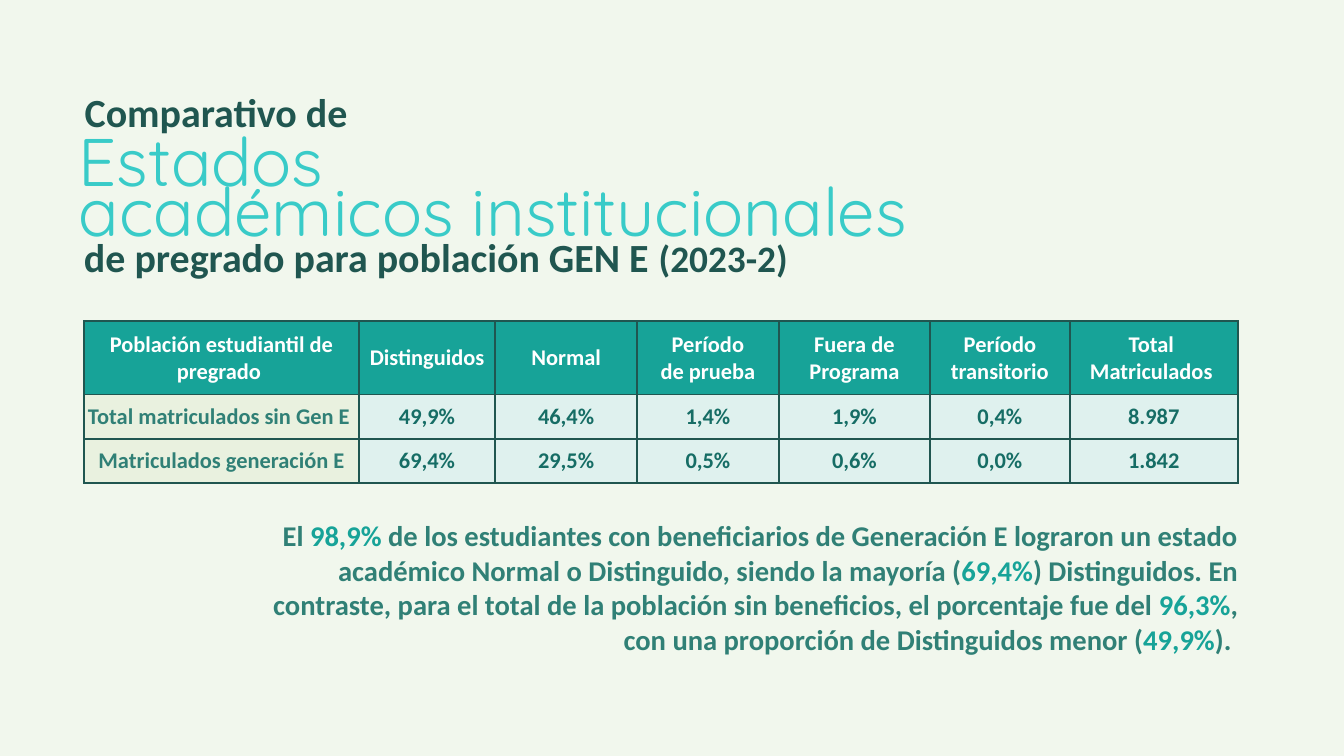
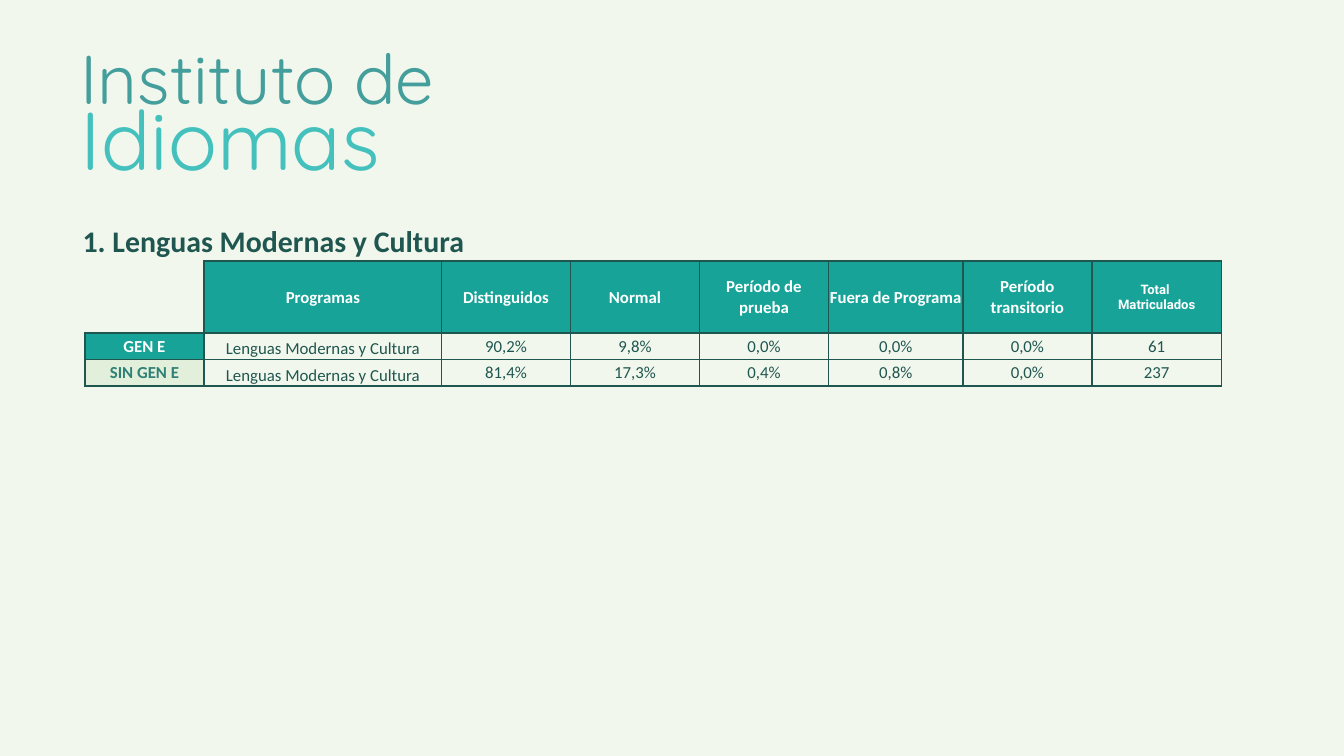
from lxml import etree
from pptx import Presentation
from pptx.dml.color import RGBColor
from pptx.enum import text
from pptx.oxml import ns
from pptx.util import Inches, Pt

COLORS = {
    "background": "F1F7ED",
    "ink": "205650",
    "teal": "17A398",
    "soft_teal": "308076",
    "figure": "166D65",
    "turquoise": "39CBC8",
    "institute": "449E9C",
    "languages": "44C0BD",
    "label": "E9F1DF",
    "label_green": "E2EFDA",
    "mint": "DFF1EE",
    "white": "FFFFFF",
}
BODY_FONT = "Calibri"
TITLE_FONT = "Quicksand"
CENTER = text.PP_ALIGN.CENTER
MIDDLE = text.MSO_ANCHOR.MIDDLE
BOTTOM = text.MSO_ANCHOR.BOTTOM
BORDER_WIDTH = Pt(2.25)


def rgb(name):
    return RGBColor.from_string(COLORS[name])


def style_run(run, size, color, bold=False, font=BODY_FONT):
    run.font.size = Pt(size)
    run.font.name = font
    run.font.bold = bold
    run.font.color.rgb = rgb(color)


def add_slide(prs):
    slide = prs.slides.add_slide(prs.slide_layouts[6])
    slide.background.fill.solid()
    slide.background.fill.fore_color.rgb = rgb("background")
    return slide


def add_frame(slide, left, top, width, height):
    frame = slide.shapes.add_textbox(
        Inches(left), Inches(top), Inches(width), Inches(height)).text_frame
    frame.word_wrap = True
    frame.auto_size = text.MSO_AUTO_SIZE.SHAPE_TO_FIT_TEXT
    frame.margin_left = frame.margin_right = 0
    frame.margin_top = frame.margin_bottom = 0
    return frame


def add_heading(slide, area, wording, size, color, bold=False,
                font=BODY_FONT, spacings=()):
    frame = add_frame(slide, *area)
    frame.text = wording
    for paragraph in frame.paragraphs:
        for run in paragraph.runs:
            style_run(run, size, color, bold, font)
    for paragraph, spacing in zip(frame.paragraphs, spacings):
        paragraph.line_spacing = Pt(spacing)
    return frame


def add_conclusion(slide, area, pieces):
    paragraph = add_frame(slide, *area).paragraphs[0]
    paragraph.alignment = text.PP_ALIGN.RIGHT
    paragraph.line_spacing = Pt(37)
    for index, piece in enumerate(pieces):
        run = paragraph.add_run()
        run.text = piece
        style_run(run, 30.6, "teal" if index % 2 else "soft_teal", True)


def set_borders(cell, visible_sides="LRTB"):
    properties = cell._tc.get_or_add_tcPr()
    for side in "LRTB":
        line = etree.SubElement(properties, ns.qn(f"a:ln{side}"), w=str(BORDER_WIDTH))
        if side in visible_sides:
            fill = etree.SubElement(line, ns.qn("a:solidFill"))
            etree.SubElement(fill, ns.qn("a:srgbClr"), val=COLORS["ink"])
        else:
            etree.SubElement(line, ns.qn("a:noFill"))


def add_grid(slide, left, top, widths, heights):
    grid = slide.shapes.add_table(
        len(heights), len(widths), Inches(left), Inches(top),
        Inches(sum(widths)), Inches(sum(heights))).table
    grid.first_row = grid.horz_banding = False
    for column, width in zip(grid.columns, widths):
        column.width = Inches(width)
    for row, height in zip(grid.rows, heights):
        row.height = Inches(height)
    return grid


def fill_cell(cell, wording, fill, size, color, bold=True, anchor=MIDDLE, font=BODY_FONT):
    set_borders(cell)
    cell.fill.solid()
    cell.fill.fore_color.rgb = rgb(fill)
    cell.margin_left = cell.margin_right = cell.margin_top = Inches(0.01)
    cell.margin_bottom = 0
    cell.vertical_anchor = anchor
    cell.text_frame.text = wording
    for paragraph in cell.text_frame.paragraphs:
        paragraph.alignment = CENTER
        for run in paragraph.runs:
            style_run(run, size, color, bold, font)


def clear_cell(cell, visible_sides):
    set_borders(cell, visible_sides)
    cell.fill.background()


def build_comparison(prs):
    slide = add_slide(prs)
    add_heading(slide, (1.26, 1.3, 18.46, 0.71), "Comparativo de",
                42.8, "ink", True, spacings=[51.7])
    add_heading(slide, (1.17, 1.79, 18.46, 1.98),
                "Estados\nacadémicos institucionales",
                72, "turquoise", font=TITLE_FONT, spacings=[84.9, 54])
    add_conclusion(slide, (3.83, 7.71, 14.59, 2.06), [
        "El ", "98,9%",
        " de los estudiantes con beneficiarios de Generación E lograron un estado "
        "académico Normal o Distinguido, siendo la mayoría (", "69,4%",
        ") Distinguidos. En contraste, para el total de la población sin beneficios, "
        "el porcentaje fue del ", "96,3%",
        ", con una proporción de Distinguidos menor (", "49,9%", "). "])
    population = add_heading(slide, (1.25, 3.46, 18.46, 0.7),
                             "de pregrado para población GEN E ",
                             42.8, "ink", True, spacings=[51.7])
    period = population.paragraphs[0].add_run()
    period.text = "(2023-2)"
    style_run(period, 40, "ink", True)

    headers = ["Población estudiantil de pregrado ", "Distinguidos", "Normal",
               "Período\nde prueba", "Fuera de Programa", "Período transitorio",
               "Total \vMatriculados "]
    groups = [
        ["Total matriculados sin Gen E ", "49,9%", "46,4%", "1,4%", "1,9%", "0,4%", "8.987"],
        ["Matriculados generación E", "69,4%", "29,5%", "0,5%", "0,6%", "0,0%", "1.842"],
    ]
    grid = add_grid(slide, 1.25, 4.78, [4.09, 2.03, 2.11, 2.11, 2.25, 2.08, 2.5],
                    [1.09, 0.66, 0.66])
    for column, header in enumerate(headers):
        fill_cell(grid.cell(0, column), header, "teal", 24, "white")
    for row, (group, *figures) in enumerate(groups, 1):
        fill_cell(grid.cell(row, 0), group, "label", 24, "soft_teal")
        for column, figure in enumerate(figures, 1):
            fill_cell(grid.cell(row, column), figure, "mint", 24, "figure")


def build_languages(prs):
    slide = add_slide(prs)
    add_heading(slide, (1.2, 0.53, 5.96, 1.26), "Instituto de",
                74, "institute", font=TITLE_FONT)
    add_heading(slide, (1.2, 1.31, 15.46, 1.48), "Idiomas",
                88, "languages", font=TITLE_FONT)
    add_heading(slide, (1.23, 3.39, 6.7, 0.46), "1. Lenguas Modernas y Cultura",
                32, "ink", True, spacings=[32.7])

    headers = ["Programas", "Distinguidos", "Normal", "Período de prueba",
               "Fuera de Programa", "Período transitorio", "Total \vMatriculados"]
    program = "Lenguas Modernas y Cultura"
    groups = [
        ("GEN E", "teal", "white", ["90,2%", "9,8%", "0,0%", "0,0%", "0,0%", "61"]),
        ("SIN GEN E", "label_green", "soft_teal",
         ["81,4%", "17,3%", "0,4%", "0,8%", "0,0%", "237"]),
    ]
    grid = add_grid(slide, 1.26, 3.88, [1.78, 3.53, 1.92, 1.92, 1.92, 2, 1.92, 1.93],
                    [0.47, 0.47, 0.39, 0.39])
    clear_cell(grid.cell(0, 0), "R")
    clear_cell(grid.cell(1, 0), "RB")
    for column, header in enumerate(headers, 1):
        size, font = (14, "Roboto") if column == len(headers) else (18, BODY_FONT)
        fill_cell(grid.cell(0, column), header, "teal", size, "white", font=font)
        fill_cell(grid.cell(1, column), "", "teal", size, "white")
        grid.cell(0, column).merge(grid.cell(1, column))
    for row, (group, fill, color, figures) in enumerate(groups, 2):
        fill_cell(grid.cell(row, 0), group, fill, 18, color)
        fill_cell(grid.cell(row, 1), program, "background", 18, "ink", False, BOTTOM)
        for column, figure in enumerate(figures, 2):
            fill_cell(grid.cell(row, column), figure, "background", 18, "ink", False)


def main():
    prs = Presentation()
    prs.slide_width = Inches(20)
    prs.slide_height = Inches(11.25)
    build_comparison(prs)
    build_languages(prs)
    prs.save("out.pptx")


if __name__ == "__main__":
    main()
